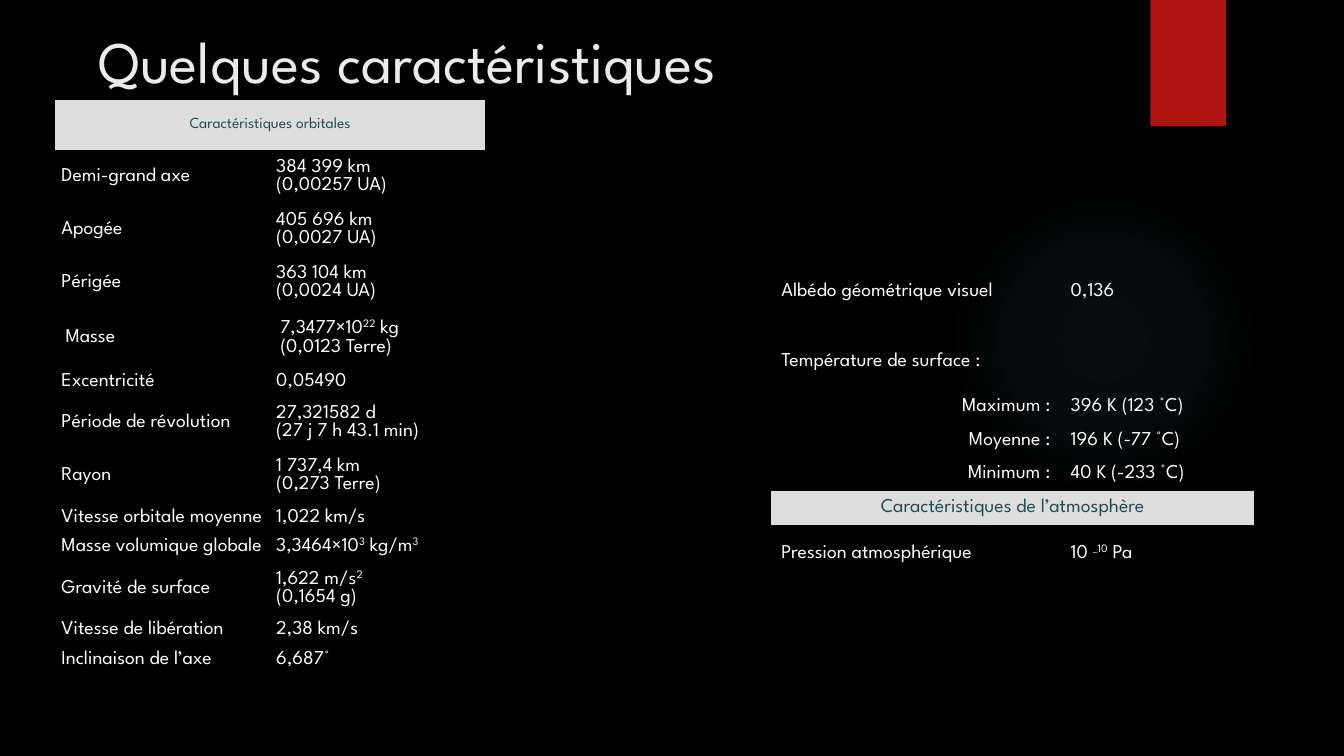
from dataclasses import dataclass

from lxml import etree
from pptx import Presentation
from pptx.dml.color import RGBColor
from pptx.enum.shapes import MSO_SHAPE
from pptx.enum.text import MSO_ANCHOR, PP_ALIGN
from pptx.oxml import parse_xml
from pptx.oxml.ns import nsdecls, qn
from pptx.util import Inches, Pt

FONT = "League Spartan"
BLACK = RGBColor(0x00, 0x00, 0x00)
WHITE = RGBColor(0xFF, 0xFF, 0xFF)
OFF_WHITE = RGBColor(0xEB, 0xEB, 0xEB)
RED = RGBColor(0xB0, 0x15, 0x13)
GREY = RGBColor(0xDD, 0xDD, 0xDD)
TEAL = RGBColor(0x1E, 0x51, 0x55)
GLOW = "50B9C1"
NO_STYLE = "{2D5ABB26-0587-4C30-8999-92F81FD0307C}"


@dataclass
class Row:
    """In the texts, ^…^ marks a superscript."""
    height: float
    label: str = ""
    value: str = ""
    align: PP_ALIGN | None = None
    header: bool = False
    size: float = 14
    tight: bool = False


@dataclass
class Table:
    left: float
    top: float
    widths: list[float]
    rows: list[Row]


ORBIT = Table(0.55, 0.99, [2.13, 2.13], [
    Row(0.5, "Caractéristiques orbitales", header=True, size=11, tight=True),
    Row(0.51, "Demi-grand axe", "384 399 km\n(0,00257 UA)", tight=True),
    Row(0.51, "Apogée", "405 696 km\n(0,0027 UA)", tight=True),
    Row(0.51, "Périgée", "363 104 km\n(0,0024 UA)", tight=True),
    Row(0.29, "Masse", "7,3477×10^22^ kg\n(0,0123 Terre)"),
    Row(0.29, "Excentricité", "0,05490", tight=True),
    Row(0.51, "Période de révolution", "27,321582 d\n(27 j 7 h 43.1 min)", tight=True),
    Row(0.29, "Rayon", "1 737,4 km\n(0,273 Terre)", tight=True),
    Row(0.29, "Vitesse orbitale moyenne", "1,022 km/s", tight=True),
    Row(0.29, "Masse volumique globale", "3,3464×10^3^ kg/m^3^", tight=True),
    Row(0.29, "Gravité de surface", "1,622 m/s^2^\n(0,1654 g)", tight=True),
    Row(0.29, "Vitesse de libération", "2,38 km/s", tight=True),
    Row(0.29, "Inclinaison de l’axe", "6,687°", tight=True),
    Row(0.29),
    Row(0.29),
])

SURFACE = Table(7.65, 2.48, [2.87, 1.92], [
    Row(0.82, "Albédo géométrique visuel", "0,136"),
    Row(0.57, "Température de surface :"),
    Row(0.33, "Maximum :", "396 K (123 °C)", PP_ALIGN.RIGHT),
    Row(0.33, "Moyenne :", "196 K (-77 °C)", PP_ALIGN.RIGHT),
    Row(0.33, "Minimum :", "40 K (-233 °C)", PP_ALIGN.RIGHT),
    Row(0.33, "Caractéristiques de l’atmosphère", header=True),
    Row(0.57, "Pression atmosphérique", "10 ^_10^ Pa"),
])


def write(p, text: str, size: float, color: RGBColor) -> None:
    """Fill a paragraph, turning ^…^ into superscripts and newlines into breaks."""
    for i, piece in enumerate(text.split("^")):
        for j, line in enumerate(piece.split("\n")):
            if j:
                p.add_line_break()
            if not line:
                continue
            r = p.add_run()
            r.text = line
            r.font.name, r.font.size = FONT, Pt(size)
            r.font.color.rgb = color
            if i % 2:
                r._r.get_or_add_rPr().set("baseline", "30000")
    for br in p._p.findall(qn("a:br")):
        etree.SubElement(br, qn("a:rPr")).set("sz", str(int(size * 100)))


def fill_cell(cell, row: Row, text: str, align: PP_ALIGN | None) -> None:
    cell.vertical_anchor = MSO_ANCHOR.MIDDLE
    if row.tight:
        cell.margin_left = cell.margin_right = Inches(0.06)
        cell.margin_top = cell.margin_bottom = Inches(0.03)
    if row.header:
        cell.fill.solid()
        cell.fill.fore_color.rgb = GREY
    else:
        cell.fill.background()
    p = cell.text_frame.paragraphs[0]
    if align is not None:
        p.alignment = align
    write(p, text, row.size, TEAL if row.header else WHITE)


def add_data_table(s, data: Table) -> None:
    frame = s.shapes.add_table(
        len(data.rows), len(data.widths), Inches(data.left), Inches(data.top),
        Inches(sum(data.widths)), Inches(sum(row.height for row in data.rows)))
    table = frame.table
    table.first_row = table.horz_banding = False
    table._tbl.tblPr.find(qn("a:tableStyleId")).text = NO_STYLE
    for column, width in zip(table.columns, data.widths):
        column.width = Inches(width)
    for i, row in enumerate(data.rows):
        table.rows[i].height = Inches(row.height)
        label, value = table.cell(i, 0), table.cell(i, 1)
        if row.header:
            label.merge(value)
            fill_cell(label, row, row.label, PP_ALIGN.CENTER)
        else:
            fill_cell(label, row, row.label, row.align)
            fill_cell(value, row, row.value, None)


def add_plain_shape(s, kind: MSO_SHAPE, left: float, top: float,
                    width: float, height: float):
    sp = s.shapes.add_shape(kind, Inches(left), Inches(top), Inches(width), Inches(height))
    sp.shadow.inherit = False
    sp.line.fill.background()
    return sp


def add_glow(s) -> None:
    sp = add_plain_shape(s, MSO_SHAPE.OVAL, 9.41, 1.83, 3.08, 3.08)
    stops = "".join(
        f'<a:gs pos="{pos * 1000}"><a:srgbClr val="{GLOW}">'
        f'<a:alpha val="{alpha * 1000}"/></a:srgbClr></a:gs>'
        for pos, alpha in [(0, 7), (36, 6), (69, 0)])
    gradient = parse_xml(
        f'<a:gradFill {nsdecls("a")}><a:gsLst>{stops}</a:gsLst><a:path path="circle">'
        '<a:fillToRect l="50000" t="50000" r="50000" b="50000"/></a:path></a:gradFill>')
    sp._element.spPr.find(qn("a:prstGeom")).addnext(gradient)


def add_title(s) -> None:
    box = s.shapes.add_textbox(Inches(0.88), Inches(0.15), Inches(10.29), Inches(0.84))
    tf = box.text_frame
    tf.word_wrap = True
    tf.vertical_anchor = MSO_ANCHOR.BOTTOM
    write(tf.paragraphs[0], "Quelques caractéristiques", 42, OFF_WHITE)


def main() -> None:
    prs = Presentation()
    prs.slide_width, prs.slide_height = Inches(13.33), Inches(7.5)
    s = prs.slides.add_slide(prs.slide_layouts[6])
    s.background.fill.solid()
    s.background.fill.fore_color.rgb = BLACK

    add_glow(s)
    ribbon = add_plain_shape(s, MSO_SHAPE.RECTANGLE, 11.41, 0, 0.75, 1.25)
    ribbon.fill.solid()
    ribbon.fill.fore_color.rgb = RED
    add_title(s)
    for data in (ORBIT, SURFACE):
        add_data_table(s, data)
    prs.save("out.pptx")


if __name__ == "__main__":
    main()
